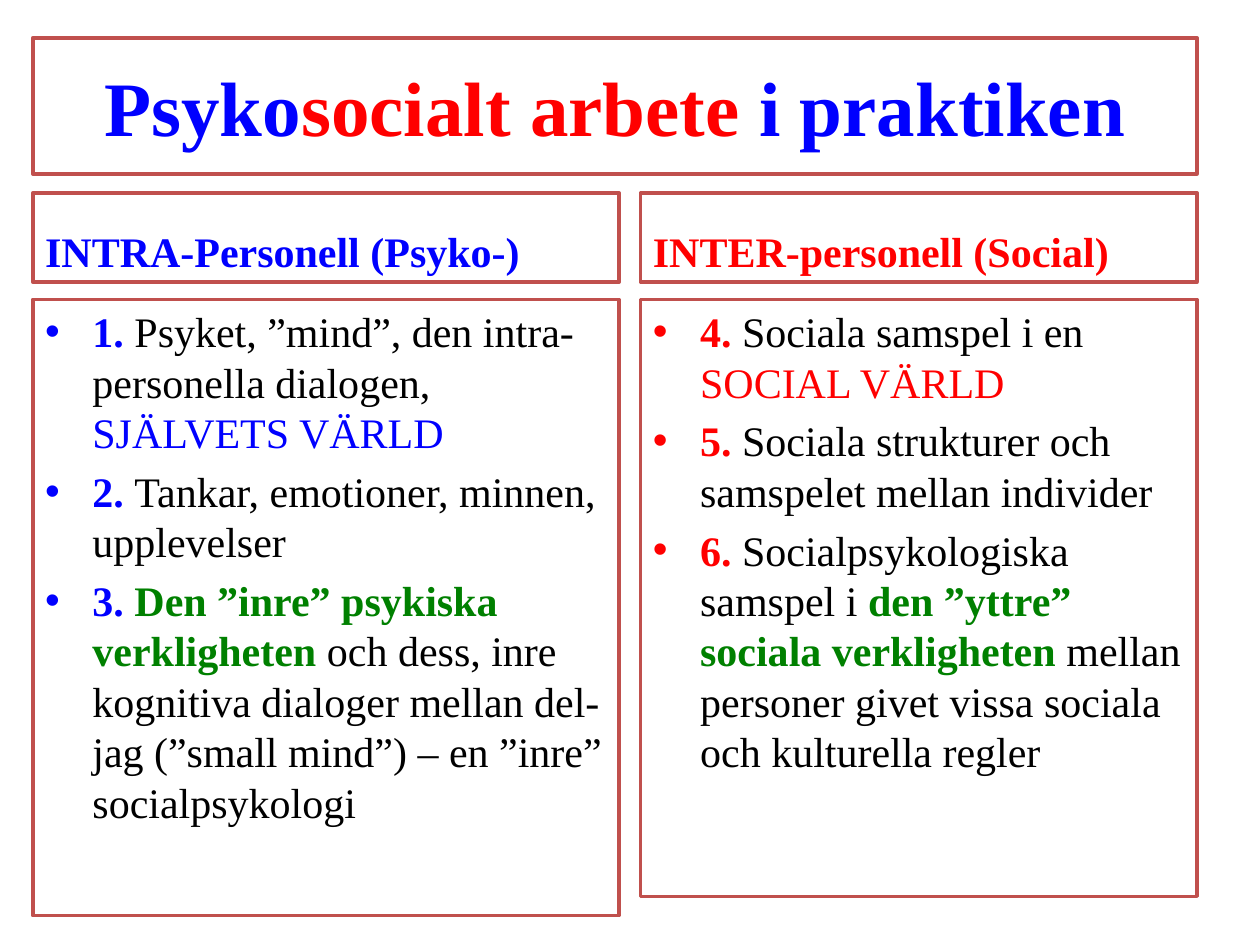
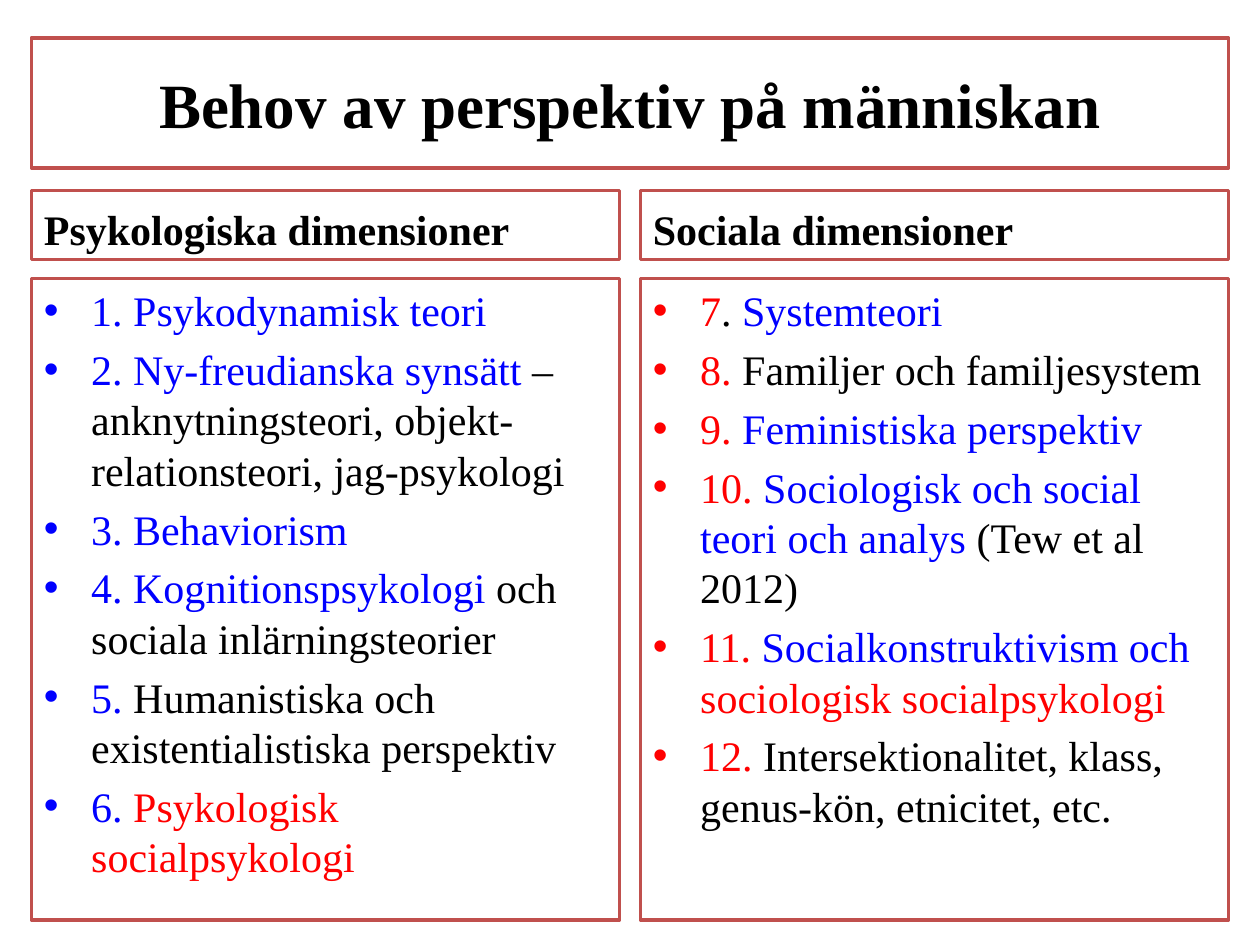
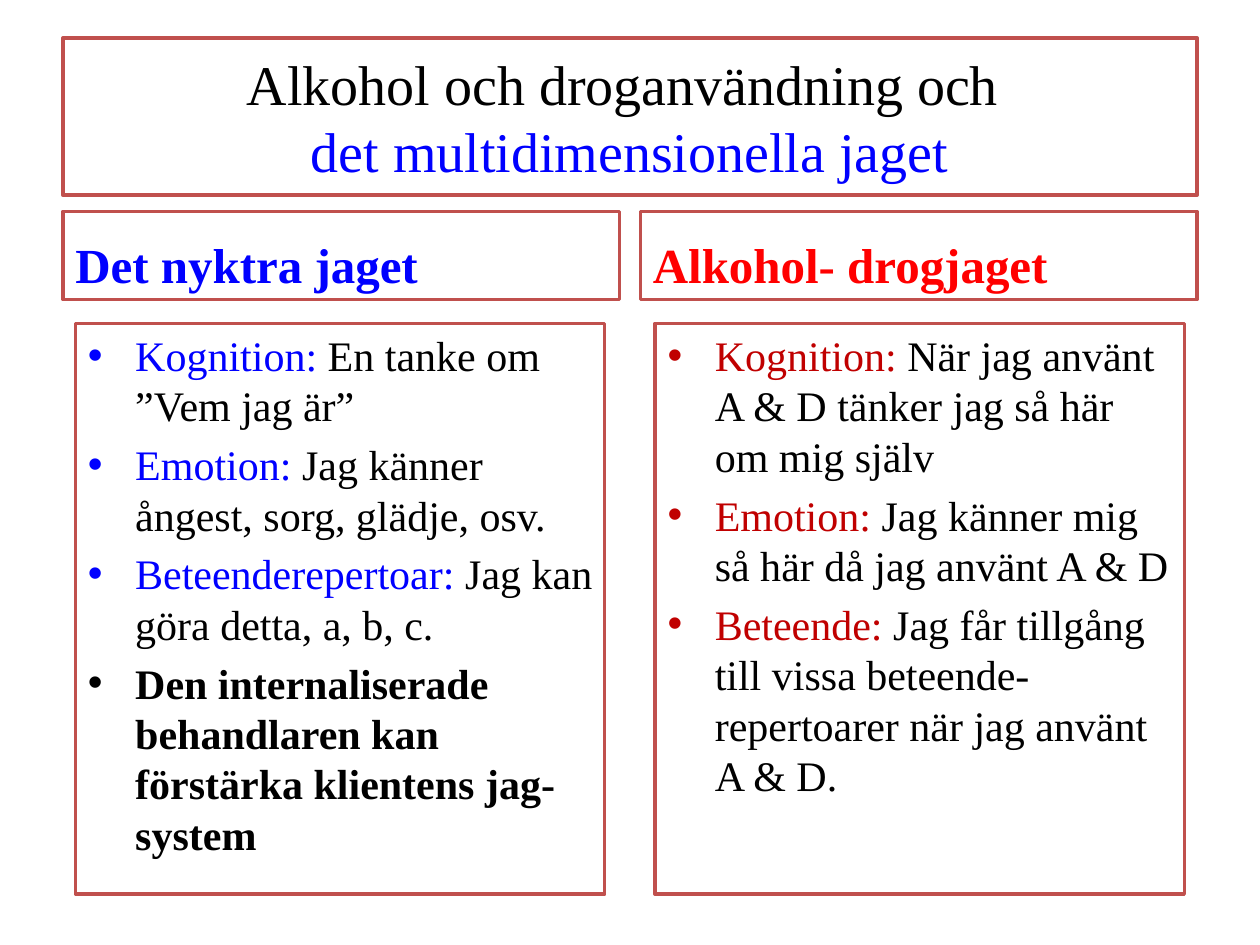
from pptx import Presentation
from pptx.dml.color import RGBColor
from pptx.enum.shapes import MSO_SHAPE
from pptx.enum.text import MSO_ANCHOR, PP_ALIGN
from pptx.oxml.ns import qn
from pptx.util import Pt
from lxml import etree

RECT = MSO_SHAPE.RECTANGLE
TOP, MIDDLE, BOTTOM = MSO_ANCHOR.TOP, MSO_ANCHOR.MIDDLE, MSO_ANCHOR.BOTTOM
LEFT, CENTER = PP_ALIGN.LEFT, PP_ALIGN.CENTER

BLACK, WHITE = "000000", "FFFFFF"
BLUE, RED, GREEN, DARK_RED = "0000FF", "FF0000", "008000", "C00000"
BORDER = "C0504D"
FONT = "Times New Roman"
RIGHT_COLUMN = 366


def rgb(value):
    return RGBColor.from_string(value)


class Deck:
    """Holds the shared style and the current slide."""

    def __init__(self):
        self.prs = Presentation()
        self.prs.slide_width, self.prs.slide_height = Pt(720), Pt(540)
        self.s = None

    def new_slide(self):
        self.s = self.prs.slides.add_slide(self.prs.slide_layouts[6])

    def box(self, at, anchor):
        sp = self.s.shapes.add_shape(RECT, *[Pt(v) for v in at])
        sp.shadow.inherit = False
        sp.fill.solid()
        sp.fill.fore_color.rgb = rgb(WHITE)
        sp.line.color.rgb = rgb(BORDER)
        sp.line.width = Pt(2)
        tf = sp.text_frame
        tf.word_wrap = True
        tf.vertical_anchor = anchor
        return tf

    def add_runs(self, p, runs, size, align=LEFT):
        """Runs are (text, colour, bold); colour and bold may be left out."""
        p.alignment = align
        for text, color, bold in (run + (BLACK, False)[len(run) - 1:] for run in runs):
            if text == "\n":
                p.add_line_break()
                continue
            r = p.add_run()
            r.text = text
            r.font.name, r.font.size, r.font.bold = FONT, Pt(size), bold
            r.font.color.rgb = rgb(color)

    def title(self, at, runs, size):
        self.add_runs(self.box(at, MIDDLE).paragraphs[0], runs, size, CENTER)

    def heading(self, at, text, color, size=24):
        p = self.box(at, BOTTOM).paragraphs[0]
        p.space_before = Pt(size * 0.2)
        self.add_runs(p, [(text, color, True)], size)

    def bullets(self, at, items, size=24):
        tf = self.box(at, TOP)
        for i, runs in enumerate(items):
            p = tf.add_paragraph() if i else tf.paragraphs[0]
            p.space_before = Pt(size * 0.2)
            self.add_runs(p, runs, size)
            pPr = p._p.get_or_add_pPr()
            pPr.set("marL", str(Pt(27)))
            pPr.set("indent", str(-Pt(27)))
            etree.SubElement(pPr, qn("a:buFont")).set("typeface", "Arial")
            etree.SubElement(pPr, qn("a:buChar")).set("char", "•")


def practice_slide(deck):
    deck.new_slide()
    left, left_width, right_width = 18.75, 335, 318
    deck.title((left, 21.6, 665.25, 77.8), [
        ("Psyko", BLUE, True), ("socialt arbete ", RED, True), ("i praktiken", BLUE, True)], 44)
    # Intrapersonal column
    deck.heading((left, 110.2, left_width, 51), "INTRA-Personell (Psyko-)", BLUE)
    deck.bullets((left, 171.2, left_width, 352), [
        [("1. ", BLUE, True), ("Psyket, ”mind”, den intra-personella dialogen, ",),
         ("SJÄLVETS VÄRLD", BLUE)],
        [("2. ", BLUE, True), ("Tankar, emotioner, minnen, upplevelser",)],
        [("3. ", BLUE, True), ("Den ”inre” psykiska verkligheten ", GREEN, True),
         ("och dess, inre kognitiva dialoger mellan del-jag (”small mind”) "
          "– en ”inre” socialpsykologi",)],
    ])
    # Interpersonal column
    deck.heading((RIGHT_COLUMN, 110.2, right_width, 51), "INTER-personell (Social)", RED)
    deck.bullets((RIGHT_COLUMN, 171.2, right_width, 341), [
        [("4. ", RED, True), ("Sociala samspel i en ",), ("SOCIAL VÄRLD", RED)],
        [("5. ", RED, True), ("Sociala strukturer och samspelet mellan individer",)],
        [("6. ", RED, True), ("Socialpsykologiska samspel i ",),
         ("den ”yttre” sociala verkligheten ", GREEN, True),
         ("mellan personer givet vissa sociala och kulturella regler",)],
    ])


def perspectives_slide(deck):
    deck.new_slide()
    left, width = 18, 336
    deck.title((left, 21.6, 684, 74.4), [("Behov av perspektiv på människan", BLACK, True)], 36)
    # Psychological column
    deck.heading((left, 108.8, width, 39.6), "Psykologiska dimensioner", BLACK)
    deck.bullets((left, 159.2, width, 366.5), [
        [("1. Psykodynamisk teori", BLUE)],
        [("2. Ny-freudianska synsätt ", BLUE),
         ("– anknytningsteori, objekt-relationsteori, jag-psykologi",)],
        [("3. Behaviorism", BLUE)],
        [("4. Kognitionspsykologi ", BLUE), ("och sociala inlärningsteorier",)],
        [("5. ", BLUE), ("Humanistiska och existentialistiska perspektiv",)],
        [("6. ", BLUE), ("Psykologisk socialpsykologi", RED)],
    ])
    # Social column
    deck.heading((RIGHT_COLUMN, 108.8, width, 39.6), "Sociala dimensioner", BLACK)
    deck.bullets((RIGHT_COLUMN, 159.2, width, 366.5), [
        [("7", RED), (". ",), ("Systemteori", BLUE)],
        [("8. ", RED), ("Familjer och familjesystem",)],
        [("9. ", RED), ("Feministiska perspektiv", BLUE)],
        [("10. ", RED), ("Sociologisk och social teori och analys ", BLUE),
         ("(Tew et al 2012)",)],
        [("11. ", RED), ("Socialkonstruktivism och ", BLUE),
         ("sociologisk socialpsykologi", RED)],
        [("12. ", RED), ("Intersektionalitet, klass, genus-kön, etnicitet, etc.",)],
    ])


def selves_slide(deck):
    deck.new_slide()
    left, width = 36, 318
    deck.title((left, 21.6, 648, 90), [
        ("Alkohol och droganvändning och ",), ("\n",),
        ("det multidimensionella jaget", BLUE)], 32)
    # Sober self
    deck.heading((left, 120.8, width, 50.4), "Det nyktra jaget", BLUE, 28)
    deck.bullets((43.2, 184.8, 302.4, 326.2), [
        [("Kognition: ", BLUE), ("En tanke om ”Vem jag är”",)],
        [("Emotion: ", BLUE), ("Jag känner ångest, sorg, glädje, osv.",)],
        [("Beteenderepertoar: ", BLUE), ("Jag kan göra detta, a, b, c.",)],
        [("Den internaliserade behandlaren kan förstärka klientens jag-system", BLACK, True)],
    ])
    # Alcohol and drug self
    deck.heading((RIGHT_COLUMN, 120.8, width, 50.4), "Alkohol- drogjaget", RED, 28)
    deck.bullets((374.4, 184.8, 302.4, 326.2), [
        [("Kognition:", DARK_RED), (" När jag använt A & D tänker jag så här om mig själv",)],
        [("Emotion:", DARK_RED), (" Jag känner mig så här då jag använt A & D",)],
        [("Beteende:", DARK_RED),
         (" Jag får tillgång till vissa beteende-repertoarer när jag använt A & D.",)],
    ])


def main():
    deck = Deck()
    practice_slide(deck)
    perspectives_slide(deck)
    selves_slide(deck)
    deck.prs.save("out.pptx")


if __name__ == "__main__":
    main()
